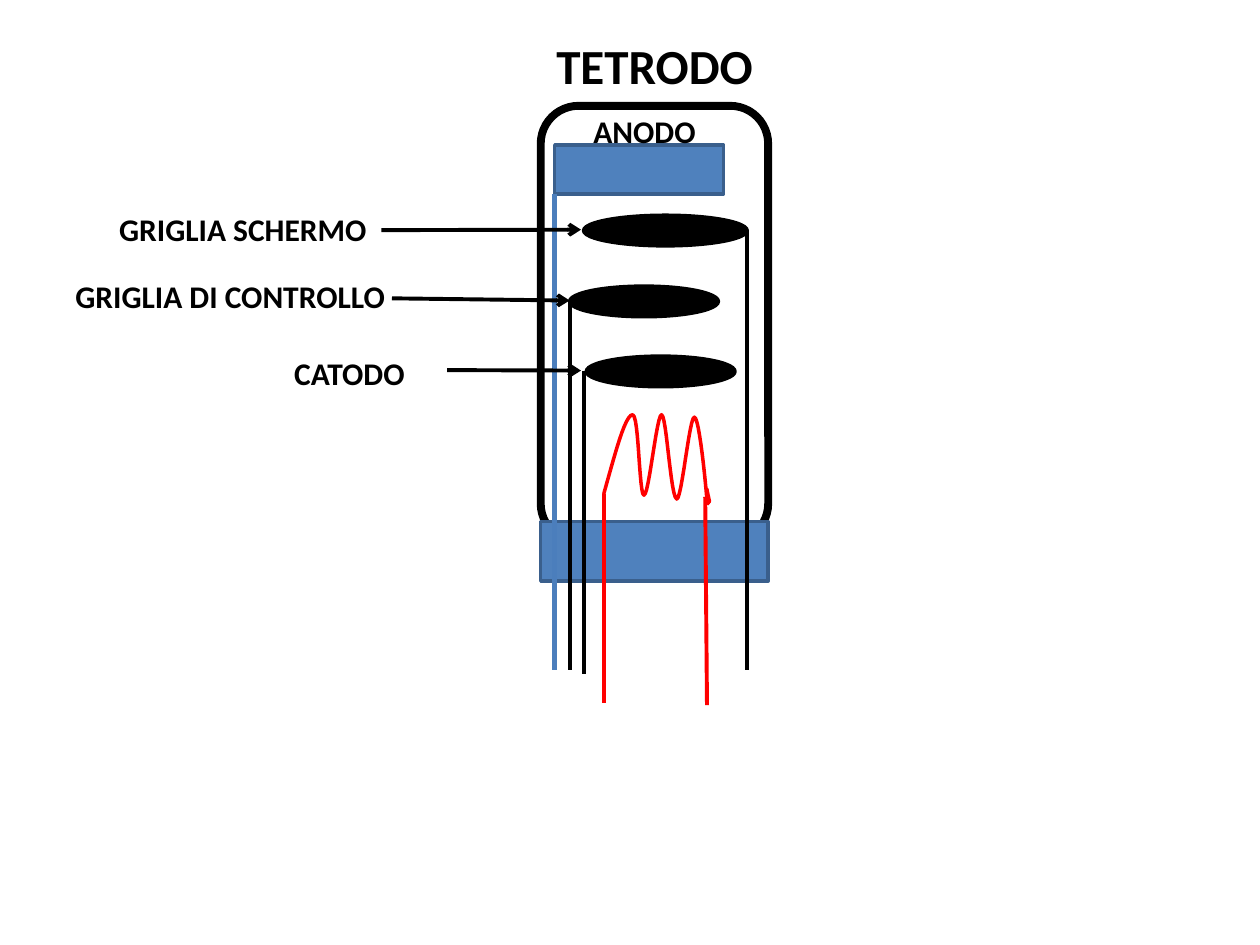
from lxml import etree
from pptx import Presentation
from pptx.dml.color import RGBColor
from pptx.enum.shapes import MSO_CONNECTOR, MSO_SHAPE
from pptx.enum.text import PP_ALIGN
from pptx.oxml.ns import qn
from pptx.util import Pt

STRAIGHT = MSO_CONNECTOR.STRAIGHT
ROUND = MSO_SHAPE.FLOWCHART_ALTERNATE_PROCESS
BLOCK = MSO_SHAPE.FLOWCHART_PROCESS
RECT = MSO_SHAPE.RECTANGLE
OVAL = MSO_SHAPE.OVAL
CENTER = PP_ALIGN.CENTER

BLACK = RGBColor(0x00, 0x00, 0x00)
WHITE = RGBColor(0xFF, 0xFF, 0xFF)
RED = RGBColor(0xFF, 0x00, 0x00)
BLUE = RGBColor(0x4F, 0x81, 0xBD)
EDGE = RGBColor(0x3A, 0x5F, 0x8C)
WIRE = RGBColor(0x4B, 0x7E, 0xBC)

COIL = [
    ((6.5, 22.3), (12.2, 0), (16.6, 0)),
    ((20.2, 0.7), (20.2, 46), (23, 46)),
    ((25.9, 46), (30.2, 0), (33.1, 0)),
    ((36, 0.7), (38.2, 47.5), (41.8, 48.2)),
    ((44.6, 48.2), (49, 1.4), (51.8, 1.4)),
    ((54.7, 1.4), (58.3, 40.3), (59, 48.2)),
    ((60.5, 55.4), (59, 45.4), (59, 45.4)),
    ((59, 43.9), (59, 41.8), (59, 42.5)),
    ((59, 43.2), (60.5, 49.7), (60.5, 49.7)),
    ((59.8, 49.7), (58.3, 41), (58.3, 41)),
]
STEPS = 12


def add_part(slide, kind, box, fill, edge, width=2):
    """Add a filled preset shape in the box."""
    part = slide.shapes.add_shape(kind, *map(Pt, box))
    part.shadow.inherit = False
    part.fill.solid()
    part.fill.fore_color.rgb = fill
    part.line.color.rgb = edge
    part.line.width = Pt(width)


def add_wire(slide, start, end, color=BLACK, width=2.25, arrow=False):
    """Add a straight wire, with an arrowhead at its end if asked."""
    wire = slide.shapes.add_connector(STRAIGHT, *map(Pt, (*start, *end)))
    wire.line.color.rgb = color
    wire.line.width = Pt(width)
    if arrow:
        etree.SubElement(wire.line._get_or_add_ln(), qn("a:tailEnd"), type="arrow")
    etree.SubElement(wire._element.spPr, qn("a:effectLst"))


def add_label(slide, text, box, size=18, align=None):
    """Add a bold label in the box."""
    label = slide.shapes.add_textbox(*map(Pt, box))
    label.text_frame.word_wrap = align is not None
    par = label.text_frame.paragraphs[0]
    par.text = text
    par.alignment = align
    par.font.name = "Calibri"
    par.font.size = Pt(size)
    par.font.bold = True
    par.font.color.rgb = BLACK


def add_bulb(slide, box):
    """Draw the title, the glass and the base of the tube."""
    x, y, w, h = box
    add_label(slide, "TETRODO", (x, y - 44, w, 41), 28, CENTER)
    add_part(slide, ROUND, box, WHITE, BLACK, 4.5)
    add_part(slide, BLOCK, (x, y + h - 11.5, w, 34), BLUE, EDGE)


def add_anode(slide, box, foot):
    """Draw the anode plate with its name and lead."""
    x, y, w, h = box
    add_part(slide, RECT, box, BLUE, EDGE)
    add_wire(slide, (x, y + h), (x, foot), WIRE, 3)
    add_label(slide, "ANODO", (x + 15, y - 22.5, 73.5, 29))


def add_plate(slide, box, lead, foot, name, spot, start):
    """Draw an oval electrode with its lead, name and arrow."""
    x, y, w, h = box
    mid = y + h / 2
    add_part(slide, OVAL, box, BLACK, BLACK)
    add_wire(slide, (lead, mid), (lead, foot))
    add_label(slide, name, spot)
    add_wire(slide, start, (min(x, 332), mid - 0.5), arrow=True)


def curve_point(nodes, t):
    """Return the point at t on a cubic curve."""
    s = 1 - t
    parts = (s ** 3, 3 * s * s * t, 3 * s * t * t, t ** 3)
    return tuple(sum(k * n[i] for k, n in zip(parts, nodes)) for i in (0, 1))


def add_heater(slide, box):
    """Draw the heater coil with its two leads."""
    x, y, w, h = box
    last = (0, 45.4)
    points = []
    for first, second, end in COIL:
        nodes = (last, first, second, end)
        points += [curve_point(nodes, i / STEPS) for i in range(1, STEPS + 1)]
        last = end
    pen = slide.shapes.build_freeform(Pt(x), Pt(y + 45.4))
    pen.add_line_segments([(Pt(x + a), Pt(y + b)) for a, b in points], close=False)
    coil = pen.convert_to_shape()
    coil.shadow.inherit = False
    coil.fill.background()
    coil.line.color.rgb = RED
    coil.line.width = Pt(2)
    add_wire(slide, (x, y + 45.4), (x, y + h), RED)
    add_wire(slide, (x + w - 1, y + 47), (x + w, y + h + 1), RED)


def main():
    """Build the slide and save it."""
    deck = Presentation()
    deck.slide_width, deck.slide_height = Pt(720), Pt(540)
    slide = deck.slides.add_slide(deck.slide_layouts[6])
    add_bulb(slide, (309, 60.5, 130, 249))
    add_heater(slide, (345, 237, 59, 165))
    add_anode(slide, (317, 83, 96.5, 28), 383)
    add_plate(slide, (325.5, 163.5, 85, 17.5), 325.5, 383,
              "GRIGLIA DI CONTROLLO", (36, 155, 193, 29), (224, 170.5))
    add_plate(slide, (333.5, 123, 93.5, 17.5), 427, 383,
              "GRIGLIA SCHERMO", (61, 116.5, 157, 29), (218, 131.5))
    add_plate(slide, (335, 203.5, 85, 17.5), 333.5, 385,
              "CATODO", (161, 199, 78.5, 29), (255.5, 211.5))
    deck.save("out.pptx")


if __name__ == "__main__":
    main()
